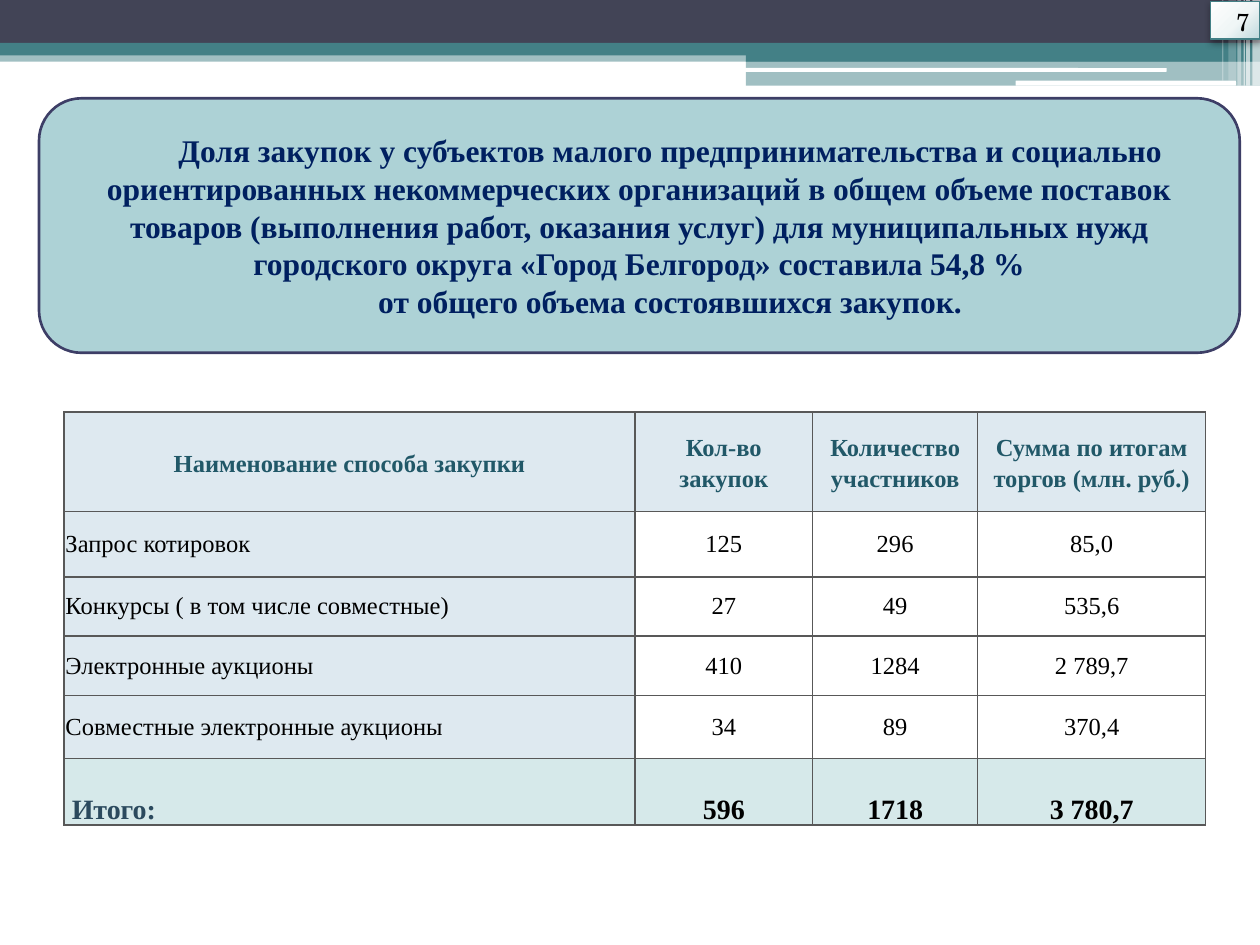
from lxml import etree
from pptx import Presentation
from pptx.dml.color import RGBColor
from pptx.enum.shapes import MSO_SHAPE
from pptx.enum.text import MSO_ANCHOR, PP_ALIGN
from pptx.oxml import parse_xml
from pptx.oxml.ns import nsdecls, qn
from pptx.util import Inches, Pt

RECT, ROUNDED = MSO_SHAPE.RECTANGLE, MSO_SHAPE.ROUNDED_RECTANGLE
LEFT, CENTER = PP_ALIGN.LEFT, PP_ALIGN.CENTER
TOP, MIDDLE, BOTTOM = MSO_ANCHOR.TOP, MSO_ANCHOR.MIDDLE, MSO_ANCHOR.BOTTOM

THEME = {
    "navy": "424456", "teal": "438086", "white": "FFFFFF", "black": "000000",
    "panel": "ADD2D6", "panel_line": "3D3E66", "panel_text": "002060",
    "grid": "585858", "head_fill": "DEE9F0", "head_text": "215868",
    "total_fill": "D6E9EA", "total_text": "2B4A5E",
    "serif": "Times New Roman", "number_font": "TeX Gyre Schola",
    "body_size": 14, "total_size": 16, "panel_size": 18,
}


def add_block(kind, box, color, opacity=100):
    """Add a borderless, shadowless filled shape; opacity is in percent."""
    block = slide.shapes.add_shape(kind, *(Inches(n) for n in box))
    block.shadow.inherit = False
    block.fill.solid()
    block.fill.fore_color.rgb = RGBColor.from_string(THEME[color])
    block.line.fill.background()
    if opacity < 100:
        rgb = block.fill._xPr.find(qn("a:solidFill"))[0]
        etree.SubElement(rgb, qn("a:alpha"), val=str(opacity * 1000))
    return block


def write(paragraph, text, size, color, bold=False, align=CENTER, font="serif"):
    paragraph.text = text
    paragraph.alignment = align
    style = {"name": THEME[font], "size": Pt(THEME[size]), "bold": bold}
    for attribute, value in style.items():
        setattr(paragraph.font, attribute, value)
    paragraph.font.color.rgb = RGBColor.from_string(THEME[color])


prs = Presentation()
prs.slide_width, prs.slide_height = Inches(10), Inches(7.5)
slide = prs.slides.add_slide(prs.slide_layouts[6])

# Header bands
for kind, box, color, opacity in [
    (RECT, (0, 0.4, 10, 0.09), "teal", 50),
    (RECT, (0, 0, 10, 0.34), "navy", 100),
    (RECT, (0, 0.34, 10, 0.1), "teal", 100),
    (RECT, (5.92, 0.39, 4.08, 0.1), "teal", 100),
    (RECT, (5.92, 0.48, 4.08, 0.2), "teal", 50),
    (ROUNDED, (5.91, 0.54, 3.35, 0.03), "white", 100),
    (ROUNDED, (8.06, 0.64, 1.75, 0.04), "white", 100),
]:
    add_block(kind, box, color, opacity)

# Pale vertical stripes in the corner
for left, width, height, opacity in [
    (9.94, 0.06, 0.68, 65), (9.89, 0.03, 0.68, 65), (9.87, 0.01, 0.68, 60),
    (9.82, 0.03, 0.68, 40), (9.75, 0.06, 0.64, 20), (9.7, 0.01, 0.64, 30),
]:
    add_block(RECT, (left, 0, width, height), "white", opacity)

# Table of purchases
rows = [
    ("Наименование способа закупки", "Кол-во закупок", "Количество участников",
     "Сумма по итогам торгов (млн. руб.)"),
    ("Запрос котировок", "125", "296", "85,0"),
    ("Конкурсы ( в том числе совместные)", "27", "49", "535,6"),
    ("Электронные аукционы", "410", "1284", "2 789,7"),
    ("Совместные электронные аукционы", "34", "89", "370,4"),
    ("Итого:", "596", "1718", "3 780,7"),
]
column_widths = [4.53, 1.41, 1.31, 1.81]
row_heights = [0.79, 0.52, 0.47, 0.47, 0.5, 0.53]
purchases = slide.shapes.add_table(
    len(rows), len(column_widths), Inches(0.51), Inches(3.27),
    Inches(sum(column_widths)), Inches(sum(row_heights))).table
purchases.first_row = purchases.horz_banding = False
for column, width in zip(purchases.columns, column_widths):
    column.width = Inches(width)
for row, height in zip(purchases.rows, row_heights):
    row.height = Inches(height)

for r, values in enumerate(rows):
    is_head, is_total = r == 0, r == len(rows) - 1
    for c, value in enumerate(values):
        cell = purchases.cell(r, c)
        side = Inches(0.06 if is_head or (is_total and c == 0) else 0.01)
        layout = {"margin_left": side, "margin_right": side, "margin_top": 0,
                  "margin_bottom": 0,
                  "vertical_anchor": BOTTOM if is_total else MIDDLE}
        for attribute, setting in layout.items():
            setattr(cell, attribute, setting)
        for edge in ("lnL", "lnR", "lnT", "lnB"):
            cell._tc.get_or_add_tcPr().append(parse_xml(
                f'<a:{edge} {nsdecls("a")} w="12700"><a:solidFill>'
                f'<a:srgbClr val="{THEME["grid"]}"/></a:solidFill></a:{edge}>'))
        if is_total or is_head or c == 0:
            cell.fill.solid()
            cell.fill.fore_color.rgb = RGBColor.from_string(
                THEME["total_fill" if is_total else "head_fill"])
        else:
            cell.fill.background()
        color = ("head_text" if is_head else
                 "total_text" if is_total and c == 0 else "black")
        paragraph = cell.text_frame.paragraphs[0]
        write(paragraph, value, "total_size" if is_total else "body_size", color,
              bold=is_head or is_total,
              align=LEFT if c == 0 and not is_head else CENTER)
        if is_head:
            paragraph.line_spacing = 1.15

# Page number
page_number = add_block(RECT, (9.61, 0.01, 0.39, 0.3), "white")
page_number.line.color.rgb = RGBColor.from_string(THEME["teal"])
page_number.line.width = Pt(0.75)
properties = page_number._element.spPr
stops = "".join(f'<a:gs pos="{at * 1000}"><a:srgbClr val="{color}"/></a:gs>'
                for at, color in [(0, "FEFEFE"), (55, "F0F6F6"), (100, "BFD9DD")])
properties.replace(properties.find(qn("a:solidFill")), parse_xml(
    f'<a:gradFill {nsdecls("a")}><a:gsLst>{stops}</a:gsLst><a:path path="circle">'
    '<a:fillToRect l="-40000" t="-90000" r="140000" b="190000"/></a:path></a:gradFill>'))
properties.find(qn("a:effectLst")).append(parse_xml(
    f'<a:outerShdw {nsdecls("a")} blurRad="{Pt(4.1)}" dist="{Pt(2)}" dir="5400000">'
    '<a:srgbClr val="000000"><a:alpha val="40000"/></a:srgbClr></a:outerShdw>'))
page_number.text_frame.vertical_anchor = TOP
number = page_number.text_frame.paragraphs[0]
write(number, "7", "body_size", "black", font="number_font")
number._p.get_or_add_pPr().set("marL", str(Inches(0.12)))

# Headline panel
headline = add_block(ROUNDED, (0.31, 0.78, 9.53, 2.02), "panel")
headline.line.color.rgb = RGBColor.from_string(THEME["panel_line"])
headline.line.width = Pt(1.5)
headline_frame = headline.text_frame
headline_frame.word_wrap = True
headline_frame.vertical_anchor = MIDDLE
headline_frame.add_paragraph()
for paragraph, text in zip(headline_frame.paragraphs, [
    "Доля закупок у субъектов малого предпринимательства и социально "
    "ориентированных некоммерческих организаций в общем объеме поставок товаров "
    "(выполнения работ, оказания услуг) для муниципальных нужд городского округа "
    "«Город Белгород» составила 54,8 %",
    "от общего объема состоявшихся закупок.",
]):
    write(paragraph, text, "panel_size", "panel_text", bold=True)
    paragraph._p.get_or_add_pPr().set("indent", str(Inches(0.49)))

prs.save("out.pptx")
